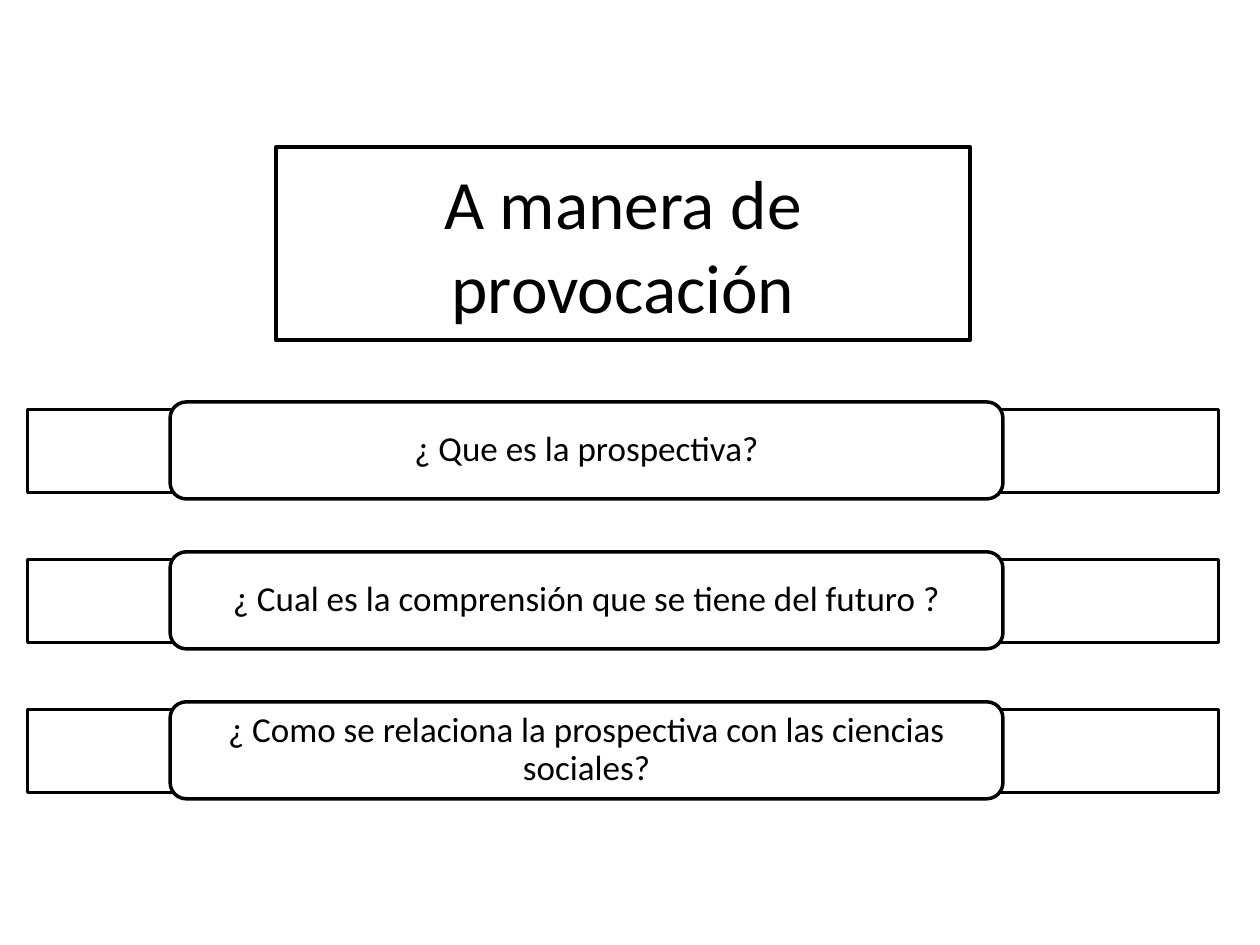
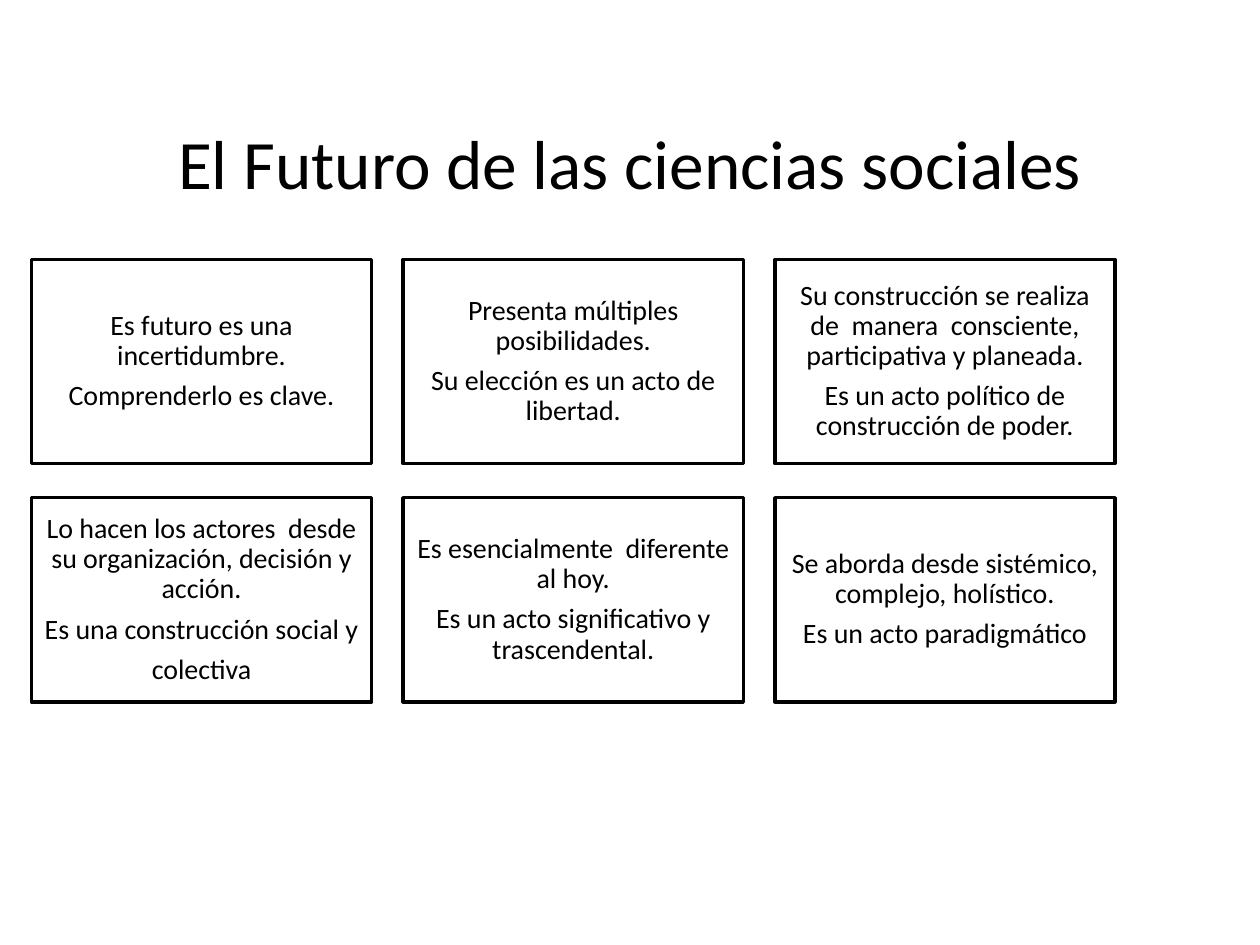
from dataclasses import dataclass

import pptx
import pptx.dml.color
import pptx.enum.shapes
import pptx.enum.text
import pptx.util

Inches = pptx.util.Inches
Pt = pptx.util.Pt
ShapeKind = pptx.enum.shapes.MSO_SHAPE

COLORS = {"paper": "FFFFFF", "ink": "000000"}
FONT = "Calibri"
TITLE_SIZE = 39.6
TITLE_ONLY_LAYOUT = 5


@dataclass(frozen=True)
class Box:
    left: float
    top: float
    width: float
    height: float


@dataclass(frozen=True)
class TextStyle:
    size: float
    side_inset: float
    vertical_inset: float
    line_spacing: float = 0.9
    space_before: float = 5.6


QUESTION_STYLE = TextStyle(size=20, side_inset=0.29, vertical_inset=0.04)
CARD_STYLE = TextStyle(size=16, side_inset=0.07, vertical_inset=0.07)
TITLE_STYLE = TextStyle(TITLE_SIZE, side_inset=0.1, vertical_inset=0.05, line_spacing=1.0)

QUESTIONS = [
    "¿ Que es la prospectiva?",
    "¿ Cual es la comprensión que se tiene del futuro ?",
    "¿ Como se relaciona la prospectiva con las ciencias sociales?",
]
QUESTION_PITCH = 1.19

CARDS = [
    ["Es futuro es una incertidumbre.", "Comprenderlo es clave."],
    ["Presenta múltiples posibilidades.", "Su elección es un acto de libertad."],
    [
        "Su construcción se realiza de  manera  consciente, participativa y planeada.",
        "Es un acto político de construcción de poder.",
    ],
    [
        "Lo hacen los actores  desde su organización, decisión y acción.",
        "Es una construcción social y",
        "colectiva",
    ],
    ["Es esencialmente  diferente al hoy.", "Es un acto significativo y trascendental."],
    ["Se aborda desde sistémico, complejo, holístico.", "Es un acto paradigmático"],
]
CARD_COLUMNS = 3
CARD_PITCH_X = 2.95
CARD_PITCH_Y = 1.89


def color(name: str) -> pptx.dml.color.RGBColor:
    return pptx.dml.color.RGBColor.from_string(COLORS[name])


def outline(shape, width: float) -> None:
    shape.line.color.rgb = color("ink")
    shape.line.width = Pt(width)


def write_text(shape, lines: list[str], style: TextStyle) -> None:
    text_frame = shape.text_frame
    text_frame.text = "\n".join(lines)
    text_frame.word_wrap = True
    text_frame.auto_size = pptx.enum.text.MSO_AUTO_SIZE.NONE
    text_frame.vertical_anchor = pptx.enum.text.MSO_ANCHOR.MIDDLE
    text_frame.margin_left = text_frame.margin_right = Inches(style.side_inset)
    text_frame.margin_top = text_frame.margin_bottom = Inches(style.vertical_inset)
    for index, paragraph in enumerate(text_frame.paragraphs):
        paragraph.alignment = pptx.enum.text.PP_ALIGN.CENTER
        paragraph.line_spacing = style.line_spacing
        paragraph.space_before = Pt(style.space_before if index else 0)
        for run in paragraph.runs:
            run.font.name = FONT
            run.font.size = Pt(style.size)
            run.font.color.rgb = color("ink")


def add_panel(slide, kind: pptx.enum.shapes.MSO_SHAPE, box: Box):
    shape = slide.shapes.add_shape(
        kind, Inches(box.left), Inches(box.top), Inches(box.width), Inches(box.height)
    )
    shape.shadow.inherit = False
    shape.fill.solid()
    shape.fill.fore_color.rgb = color("paper")
    outline(shape, 2)
    return shape


def add_titled_slide(presentation, title: str, box: Box):
    slide = presentation.slides.add_slide(presentation.slide_layouts[TITLE_ONLY_LAYOUT])
    slide.background.fill.solid()
    slide.background.fill.fore_color.rgb = color("paper")
    shape = slide.shapes.title
    shape.left, shape.top = Inches(box.left), Inches(box.top)
    shape.width, shape.height = Inches(box.width), Inches(box.height)
    write_text(shape, [title], TITLE_STYLE)
    return slide


def build_questions(presentation) -> None:
    slide = add_titled_slide(
        presentation, "A manera de provocación", Box(2.19, 1.17, 5.51, 1.53)
    )
    outline(slide.shapes.title, 2.25)
    for index, question in enumerate(QUESTIONS):
        offset = index * QUESTION_PITCH
        add_panel(slide, ShapeKind.RECTANGLE, Box(0.22, 3.25 + offset, 9.45, 0.66))
        label = add_panel(
            slide, ShapeKind.ROUNDED_RECTANGLE, Box(1.35, 3.19 + offset, 6.61, 0.77)
        )
        write_text(label, [question], QUESTION_STYLE)


def build_future(presentation) -> None:
    slide = add_titled_slide(
        presentation, "El Futuro de las ciencias sociales", Box(0.69, 1.16, 8.62, 0.85)
    )
    slide.shapes.title.text_frame.margin_bottom = Inches(0.65)
    for index, lines in enumerate(CARDS):
        row, column = divmod(index, CARD_COLUMNS)
        box = Box(0.25 + column * CARD_PITCH_X, 2.06 + row * CARD_PITCH_Y, 2.7, 1.62)
        card = add_panel(slide, ShapeKind.RECTANGLE, box)
        write_text(card, lines, CARD_STYLE)


def main() -> None:
    presentation = pptx.Presentation()
    presentation.slide_width = Inches(10)
    presentation.slide_height = Inches(7.5)
    build_questions(presentation)
    build_future(presentation)
    presentation.save("out.pptx")


if __name__ == "__main__":
    main()
